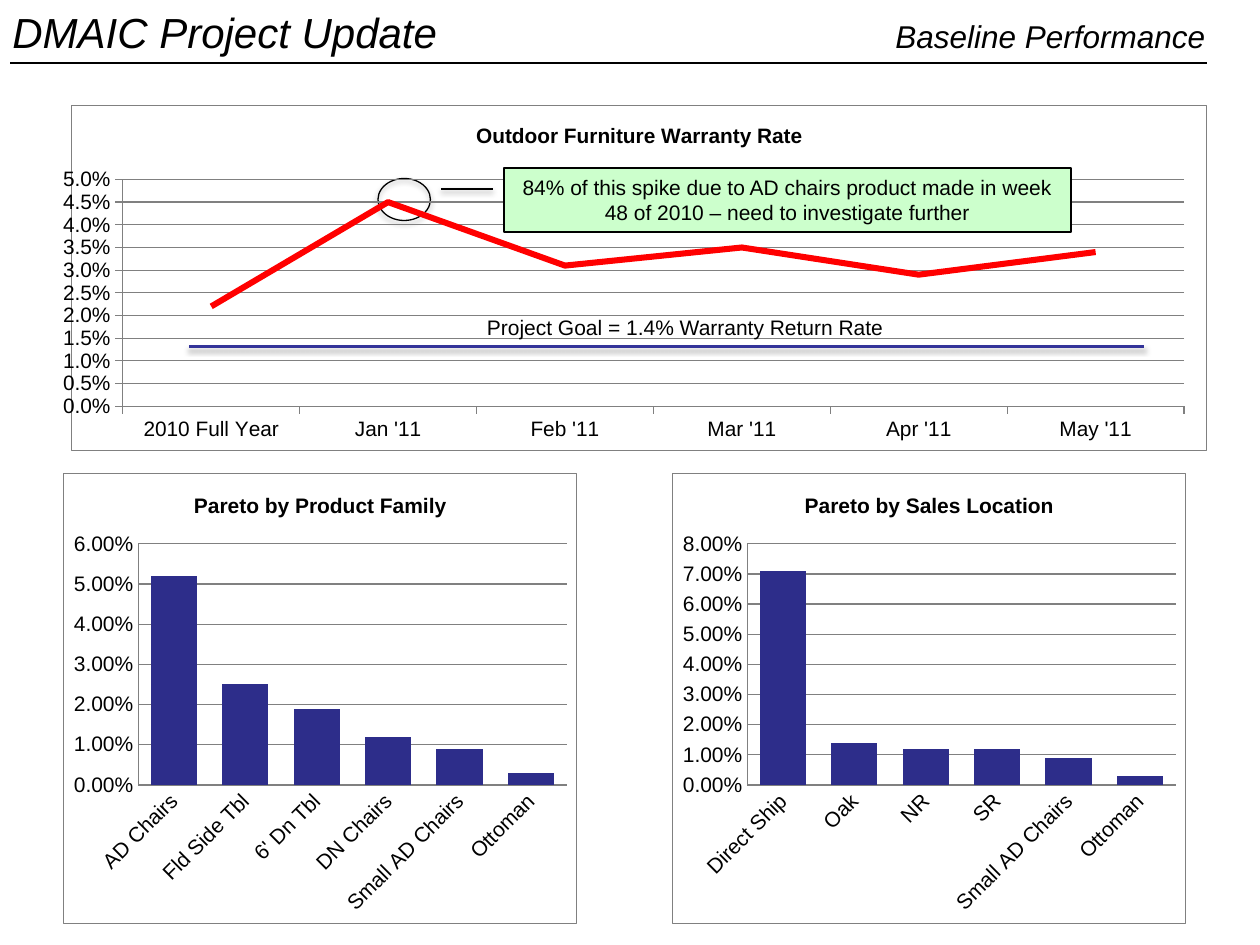
"""Build the baseline performance slide of a DMAIC project update."""
from lxml.etree import fromstring
from pptx import Presentation
from pptx.chart.data import CategoryChartData
from pptx.dml.color import RGBColor
from pptx.enum.chart import XL_CHART_TYPE, XL_TICK_LABEL_POSITION, XL_TICK_MARK
from pptx.enum.shapes import MSO_CONNECTOR, MSO_SHAPE
from pptx.enum.text import PP_ALIGN
from pptx.oxml.ns import nsdecls, qn
from pptx.util import Inches, Pt

deck = Presentation()
deck.slide_width, deck.slide_height = Inches(10), Inches(7.5)
page = deck.slides.add_slide(deck.slide_layouts[6])
column = deck.slide_width / 120
row = deck.slide_height / 90


def color(hex_string):
    return RGBColor.from_string(hex_string)


def write(text, left, top, width, height, size=12, italic=False, wrap=False,
          align=PP_ALIGN.LEFT, fill=None):
    box = page.shapes.add_textbox(int(left * column), int(top * row),
                                  int(width * column), int(height * row))
    if fill:
        box.fill.solid()
        box.fill.fore_color.rgb = color(fill)
        box.line.color.rgb = color("000000")
        box.line.width = Pt(0.75)
    box.text_frame.word_wrap = wrap
    para = box.text_frame.paragraphs[0]
    para.alignment = align
    span = para.add_run()
    span.text = text
    span.font.name = "Arial"
    span.font.size = Pt(size)
    span.font.italic = italic
    span.font.color.rgb = color("000000")


spike_ring = page.shapes.add_shape(MSO_SHAPE.OVAL, int(36 * column), int(17 * row),
                                   int(5 * column), int(4 * row))
spike_ring.fill.background()
spike_ring.line.color.rgb = color("000000")
spike_ring.line.width = Pt(0.75)
shadowed = [spike_ring]

months = ["2010 Full Year", "Jan '11", "Feb '11", "Mar '11", "Apr '11", "May '11"]
families = ["AD Chairs", "Fld Side Tbl", "6' Dn Tbl", "DN Chairs", "Small AD Chairs", "Ottoman"]
locations = ["Direct Ship", "Oak", "NR", "SR", "Small AD Chairs", "Ottoman"]
charts = [
    ("Outdoor Furniture Warranty Rate", XL_CHART_TYPE.LINE, (6, 10, 109, 33),
     months, [0.022, 0.045, 0.031, 0.035, 0.029, 0.034], 0.05, 0.005, "0.0%"),
    ("Pareto by Product Family", XL_CHART_TYPE.COLUMN_STACKED, (6, 45, 49, 43),
     families, [0.052, 0.025, 0.019, 0.012, 0.009, 0.003], 0.06, 0.01, "0.00%"),
    ("Pareto by Sales Location", XL_CHART_TYPE.COLUMN_STACKED, (64, 45, 49, 43),
     locations, [0.071, 0.014, 0.012, 0.012, 0.009, 0.003], 0.08, 0.01, "0.00%"),
]
for title, kind, (left, top, width, height), names, rates, highest, step, number_format in charts:
    is_line = kind == XL_CHART_TYPE.LINE
    data = CategoryChartData(number_format=number_format)
    data.categories = names
    data.add_series("Series 1", rates)
    chart = page.shapes.add_chart(kind, int(left * column), int(top * row),
                                  int(width * column), int(height * row), data).chart
    chart.has_legend = False
    chart.font.name = "Arial"
    chart.font.size = Pt(12)
    chart.font.color.rgb = color("000000")
    chart.has_title = True
    chart.chart_title.include_in_layout = False
    heading = chart.chart_title.text_frame
    heading.text = title
    span = heading.paragraphs[0].runs[0]
    span.font.name = "Arial"
    span.font.size = Pt(12)
    span.font.bold = True
    span.font.color.rgb = color("000000")

    for axis in (chart.category_axis, chart.value_axis):
        axis.major_tick_mark = XL_TICK_MARK.OUTSIDE if is_line else XL_TICK_MARK.NONE
        axis.minor_tick_mark = XL_TICK_MARK.NONE
        axis.tick_label_position = XL_TICK_LABEL_POSITION.NEXT_TO_AXIS
        axis.tick_labels.font.size = Pt(12)
        axis.format.line.color.rgb = color("808080")
        axis.format.line.width = Pt(0.75)
    rate_axis = chart.value_axis
    rate_axis.minimum_scale, rate_axis.maximum_scale = 0, highest
    rate_axis.major_unit = step
    rate_axis.tick_labels.number_format = number_format
    rate_axis.tick_labels.number_format_is_linked = False
    rate_axis.has_major_gridlines = True
    rate_axis.major_gridlines.format.line.color.rgb = color("808080")
    rate_axis.major_gridlines.format.line.width = Pt(0.75)

    plot = chart.plots[0]
    plot.vary_by_categories = False
    series = plot.series[0]
    if is_line:
        series.smooth = False
        series.format.line.color.rgb = color("FF0000")
        series.format.line.width = Pt(3.5)
        plot_area = chart.element.find(".//" + qn("c:plotArea"))
        for layout in plot_area.findall(qn("c:layout")):
            plot_area.remove(layout)
        shares = {"x": 0.045, "y": 0.214, "w": 0.935, "h": 0.657}
        modes = '<c:layoutTarget val="inner"/><c:xMode val="edge"/><c:yMode val="edge"/>'
        sizes = "".join(f'<c:{side} val="{share}"/>' for side, share in shares.items())
        plot_area.insert(0, fromstring(
            f'<c:layout {nsdecls("c")}><c:manualLayout>{modes}{sizes}</c:manualLayout></c:layout>'))
    else:
        plot.gap_width, plot.overlap = 55, 100
        series.format.fill.solid()
        series.format.fill.fore_color.rgb = color("2D2D8A")
        labels = chart.category_axis.tick_labels.font
        labels.color.rgb = color("000000")
        body = chart.element.find(".//" + qn("c:catAx")).find(".//" + qn("a:bodyPr"))
        body.set("rot", "-2700000")
        body.set("vert", "horz")
    chart.element.find(qn("c:chart")).addnext(fromstring(
        f'<c:spPr {nsdecls("c", "a")}><a:noFill/><a:ln w="9525"><a:solidFill>'
        '<a:srgbClr val="808080"/></a:solidFill></a:ln></c:spPr>'))

lines = [
    (1, 115, 6, "000000", 1.5, False),
    (18, 109, 33, "333399", 2, True),
    (42, 47, 18, "000000", 1, True),
]
for start, end, level, line_color, weight, has_shadow in lines:
    line = page.shapes.add_connector(MSO_CONNECTOR.STRAIGHT, int(start * column), int(level * row),
                                     int(end * column), int(level * row))
    line.line.color.rgb = color(line_color)
    line.line.width = Pt(weight)
    if has_shadow:
        shadowed.append(line)
    else:
        line.element.spPr.append(fromstring(f'<a:effectLst {nsdecls("a")}/>'))

for shape in shadowed:
    shape.element.spPr.append(fromstring(
        f'<a:effectLst {nsdecls("a")}><a:outerShdw blurRad="{Pt(3.1)}" dist="{Pt(1.7)}" '
        'dir="5400000" rotWithShape="0"><a:srgbClr val="000000"><a:alpha val="37000"/>'
        '</a:srgbClr></a:outerShdw></a:effectLst>'))

write("DMAIC Project Update", 0, 0, 44.3, 6.1, size=24, italic=True)
write("Baseline Performance", 84.1, 1, 32.9, 4.8, size=18, italic=True)
write("Project Goal = 1.4% Warranty Return Rate", 45.2, 29.4, 40.6, 3.6)
write("84% of this spike due to AD chairs product made in week 48 of 2010 – "
      "need to investigate further", 48, 16, 54, 6.1,
      wrap=True, align=PP_ALIGN.CENTER, fill="CCFFCC")

deck.save("out.pptx")
